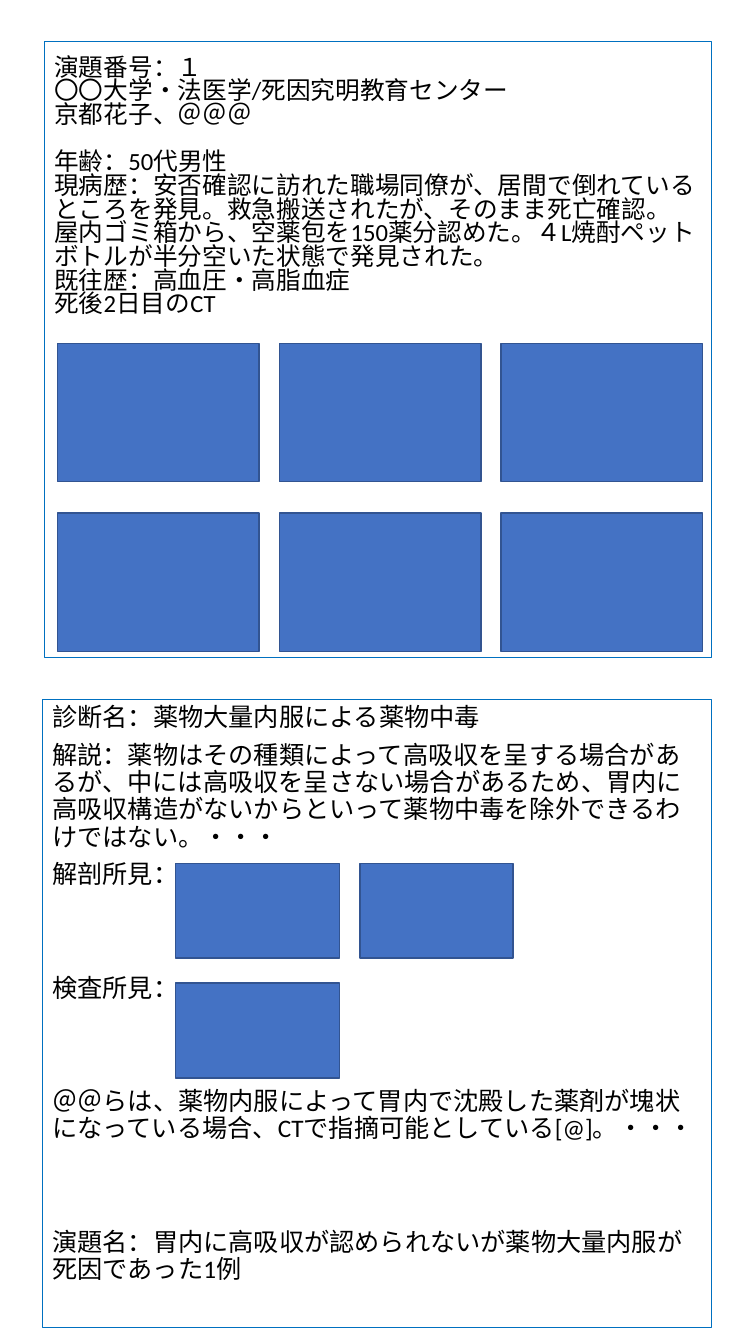
from pptx import Presentation
from pptx.dml.color import RGBColor
from pptx.enum.shapes import MSO_SHAPE
from pptx.enum.text import MSO_ANCHOR, PP_ALIGN
from pptx.util import Cm, Pt

RECTANGLE = MSO_SHAPE.RECTANGLE
TOP = MSO_ANCHOR.TOP
LEFT = PP_ALIGN.LEFT
COLOURS = {"frame": "0070C0", "image": "4472C4", "edge": "325491", "text": "000000"}


def add_rectangle(left, top, width, height, line, weight, fill=None):
    box = page.shapes.add_shape(RECTANGLE, Cm(left), Cm(top), Cm(width), Cm(height))
    box.shadow.inherit = False
    box.line.color.rgb = RGBColor.from_string(COLOURS[line])
    box.line.width = Pt(weight)
    if fill:
        box.fill.solid()
        box.fill.fore_color.rgb = RGBColor.from_string(COLOURS[fill])
    else:
        box.fill.background()
    return box


def write_paragraphs(box, entries, size, spacing, inset):
    frame = box.text_frame
    frame.word_wrap = True
    frame.vertical_anchor = TOP
    frame.margin_top = Cm(inset)
    for index, (text, before) in enumerate(entries):
        para = frame.paragraphs[0] if index == 0 else frame.add_paragraph()
        para.text = text
        para.alignment = LEFT
        para.line_spacing = spacing
        para.space_before = Pt(before)
        para.font.name = "Calibri"
        para.font.size = Pt(size)
        para.font.color.rgb = RGBColor.from_string(COLOURS["text"])


deck = Presentation()
deck.slide_width = Cm(19.05)
deck.slide_height = Cm(33.86)
page = deck.slides.add_slide(deck.slide_layouts[6])

case_entries = [
    ("演題番号：１", 0),
    ("〇〇大学・法医学/死因究明教育センター", 0),
    ("京都花子、＠＠＠", 0),
    ("年齢：50代男性", 17),
    ("現病歴：安否確認に訪れた職場同僚が、居間で倒れているところを発見。救急搬送されたが、そのまま死亡確認。", 0),
    ("屋内ゴミ箱から、空薬包を150薬分認めた。４L焼酎ペットボトルが半分空いた状態で発見された。", 0),
    ("既往歴：高血圧・高脂血症", 0),
    ("死後2日目のCT", 0),
]
diagnosis_entries = [
    ("診断名：薬物大量内服による薬物中毒", 0),
    ("解説：薬物はその種類によって高吸収を呈する場合があるが、中には高吸収を呈さない場合があるため、胃内に高吸収構造がないからといって薬物中毒を除外できるわけではない。・・・", 7.5),
    ("解剖所見：", 7.5),
    ("検査所見：", 61.5),
    ("＠＠らは、薬物内服によって胃内で沈殿した薬剤が塊状になっている場合、CTで指摘可能としている[@]。・・・", 61.5),
    ("演題名：胃内に高吸収が認められないが薬物大量内服が死因であった1例", 61.5),
]

diagnosis_box = add_rectangle(1.07, 17.63, 16.87, 15.82, "frame", 0.75)
write_paragraphs(diagnosis_box, diagnosis_entries, 18, 0.9, 0.13)
for left, top, width in [(4.43, 21.75, 4.12), (9.07, 21.75, 3.86), (4.43, 24.77, 4.12)]:
    add_rectangle(left, top, width, 2.39, "edge", 1, "image")

case_box = add_rectangle(1.12, 1.04, 16.81, 15.52, "frame", 0.75)
write_paragraphs(case_box, case_entries, 17.6, 0.8, 0.4)
for top in (8.66, 12.93):
    for column in range(3):
        add_rectangle(1.45 + 5.59 * column, top, 5.08, 3.48, "edge", 1, "image")

deck.save("out.pptx")
